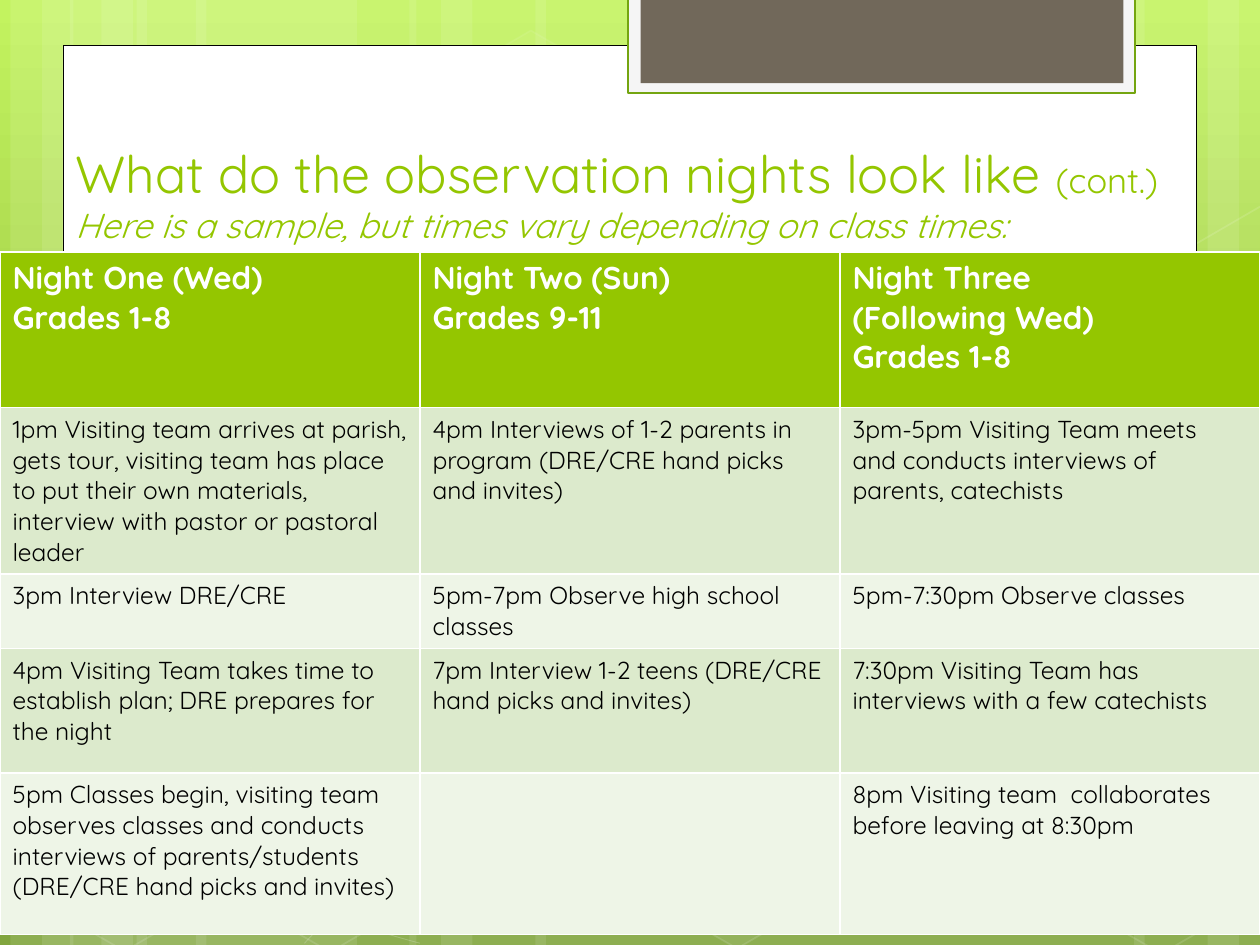
from copy import deepcopy
from math import cos, radians, sin

from pptx import Presentation
from pptx.dml.color import RGBColor
from pptx.enum.shapes import MSO_SHAPE
from pptx.enum.text import MSO_ANCHOR
from pptx.oxml.ns import qn
from pptx.oxml.xmlchemy import OxmlElement
from pptx.util import Pt

FONT = "Quicksand"
WHITE, BLACK, GREEN = "FFFFFF", "000000", "94C600"
BODY_FILLS = ["DCEACC", "EEF5E7"]
WIDTH, HEIGHT = 720, 540
TILT = 30

# Text
TITLE = [
    ("What do the observation nights look like ", 29.7, False),
    ("(cont.)", 19.8, False),
    ("\n", 19.8, False),
    ("Here is a sample, but times vary depending on class times:", 19.8, True),
]
SCHEDULE = [
    ["Night One (Wed)\nGrades 1-8",
     "Night Two (Sun)\nGrades 9-11",
     "Night Three\n(Following Wed)\nGrades 1-8"],
    ["1pm Visiting team arrives at parish, gets tour, visiting team has place to put "
     "their own materials, interview with pastor or pastoral leader",
     "4pm Interviews of 1-2 parents in program (DRE/CRE hand picks and invites)",
     "3pm-5pm Visiting Team meets and conducts interviews of parents, catechists"],
    ["3pm Interview DRE/CRE",
     "5pm-7pm Observe high school classes",
     "5pm-7:30pm Observe classes"],
    ["4pm Visiting Team takes time to establish plan; DRE prepares for the night",
     "7pm Interview 1-2 teens (DRE/CRE hand picks and invites)",
     "7:30pm Visiting Team has interviews with a few catechists"],
    ["5pm Classes begin, visiting team observes classes and conducts interviews of "
     "parents/students (DRE/CRE hand picks and invites)",
     "",
     "8pm Visiting team  collaborates before leaving at 8:30pm"],
]
ROW_HEIGHTS = [89, 95, 42.5, 71.3, 92.2]

# Backdrop: gradient stops, then bands as (left, width, rotation)
GRADIENT = [(0, "C3F35F"), (0.62, "93BF3F"), (1, "81A53E")]
BANDS = [
    (78, 126, 0), (6, 36, 0), (24, 60, 0), (112, 126, 0), (40, 36, 0), (58, 60, 0),
    (528, 126, 180), (690, 36, 180), (648, 60, 180),
    (306, 222, 0), (234, 36, 0), (252, 60, 0),
]
# Curves: a start point, then three points for each Bezier segment
CURVES = [
    [(5, 485), (44, 487), (83, 489), (137, 488), (191, 487), (258, 486), (330, 479),
     (402, 472), (504, 459), (570, 444), (636, 431), (703, 409), (725, 397)],
    [(5, 343), (26, 332), (47, 321), (87, 310), (128, 300), (186, 284), (250, 279),
     (314, 274), (392, 273), (471, 279), (550, 284), (682, 307), (725, 312)],
    [(4, 444), (91, 484), (178, 523), (240, 539)],
    [(5, 416), (27, 424), (50, 432), (92, 444), (134, 454), (197, 472), (257, 485),
     (317, 497), (392, 510), (452, 517), (512, 525), (576, 528), (614, 530),
     (652, 533), (662, 531), (680, 531), (699, 531), (712, 529), (725, 528)],
    [(174, 539), (187, 525), (200, 510), (217, 498), (235, 485), (259, 470), (279, 460),
     (300, 450), (312, 446), (338, 438), (364, 431), (413, 421), (438, 416),
     (464, 411), (467, 411), (490, 410), (512, 408), (547, 405), (572, 405),
     (597, 404), (638, 405), (638, 405), (654, 405), (670, 405), (686, 405),
     (699, 406), (712, 406), (718, 407), (724, 408), (722, 407), (724, 408)],
]
# Hexagons: left, top, fill opacity, line opacity (percent)
HEXAGONS = [
    (240.5, 26, 4, 8), (358, 424, 6, 12), (8, 425.5, 0, 12), (10, 224.5, 7, 8),
    (125.5, 426, 0, 12), (542, 326, 10, 12), (600.5, 427, 0, 12), (600.5, 226, 7, 8),
]
# Hexagons cut by the page edge: centre, corners, fill opacity, line opacity
CUT_HEXAGONS = [
    ((26, 385), [(6, 320), (14, 315), (69, 347), (68, 410), (14, 442), (6, 437)], 10, 12),
    ((709, 374.5),
     [(667, 349), (721, 318), (726, 321), (726, 441), (721, 444), (667, 413)], 4, 12),
    ((709, 173.5),
     [(667, 149), (721, 117), (727, 121), (726, 241), (721, 244), (667, 212)], 0, 12),
]


def rgb(value):
    return RGBColor.from_string(value)


def set_opacity(holder, percent):
    """Add an alpha value to the solid fill directly inside an element."""
    color = holder.find(qn("a:solidFill"))[0]
    alpha = OxmlElement("a:alpha")
    alpha.set("val", str(percent * 1000))
    color.append(alpha)


def paint(shape, fill=None, line=None, weight=1, fill_opacity=100, line_opacity=100):
    shape.shadow.inherit = False
    properties = shape.element.spPr
    if fill and fill_opacity:
        shape.fill.solid()
        shape.fill.fore_color.rgb = rgb(fill)
        if fill_opacity < 100:
            set_opacity(properties, fill_opacity)
    else:
        shape.fill.background()
    if line:
        shape.line.color.rgb = rgb(line)
        shape.line.width = Pt(weight)
        if line_opacity < 100:
            set_opacity(properties.find(qn("a:ln")), line_opacity)
    else:
        shape.line.fill.background()


def add_preset(page, kind, left, top, width, height, **style):
    shape = page.shapes.add_shape(kind, Pt(left), Pt(top), Pt(width), Pt(height))
    paint(shape, **style)
    return shape


def add_outline(page, points, close, **style):
    builder = page.shapes.build_freeform(*points[0], scale=Pt(1))
    builder.add_line_segments(points[1:], close=close)
    shape = builder.convert_to_shape()
    paint(shape, **style)
    return shape


def bend(shape):
    """Merge every three straight segments into one cubic Bezier segment."""
    segments = list(shape.element.iter(qn("a:lnTo")))
    for first in range(0, len(segments), 3):
        bezier = OxmlElement("a:cubicBezTo")
        segments[first].addprevious(bezier)
        for segment in segments[first:first + 3]:
            bezier.append(segment[0])
            segment.getparent().remove(segment)


def untilt(point, centre):
    dx, dy = point[0] - centre[0], point[1] - centre[1]
    c, s = cos(radians(TILT)), sin(radians(TILT))
    return centre[0] + dx * c + dy * s, centre[1] - dx * s + dy * c


def add_backdrop(page):
    fill = page.background.fill
    fill.gradient()
    fill.gradient_angle = 270
    stops = next(page.element.iter(qn("a:gsLst")))
    stops.insert(1, deepcopy(stops[0]))
    for stop, (position, color) in zip(fill.gradient_stops, GRADIENT):
        stop.position = position
        stop.color.rgb = rgb(color)

    for left, width, rotation in BANDS:
        band = add_preset(page, MSO_SHAPE.RECTANGLE, left, 0, width, HEIGHT,
                          fill=WHITE, fill_opacity=10)
        band.rotation = rotation
    for curve in CURVES:
        bend(add_outline(page, curve, False, line=WHITE, weight=0.5, line_opacity=20))
    for left, top, inside, edge in HEXAGONS:
        hexagon = add_preset(page, MSO_SHAPE.HEXAGON, left, top, 126, 109.5, fill=WHITE,
                             line=WHITE, fill_opacity=inside, line_opacity=edge)
        hexagon.adjustments[0] = 0.285
        hexagon.rotation = TILT
    for centre, corners, inside, edge in CUT_HEXAGONS:
        upright = [untilt(corner, centre) for corner in corners]
        hexagon = add_outline(page, upright, True, fill=WHITE, line=WHITE,
                              fill_opacity=inside, line_opacity=edge)
        hexagon.rotation = TILT

    # White card and the tab hanging from the top edge
    rectangle = MSO_SHAPE.RECTANGLE
    add_preset(page, rectangle, 36, 26, 648, 486.5, fill=WHITE, line=BLACK, weight=0.5)
    add_preset(page, rectangle, 359, -1.5, 289.5, 54.5, fill="F5F5F5", line="74A510",
               weight=1.25)
    add_preset(page, rectangle, 366, -1.5, 276, 49, fill="71685A")


def add_title(page):
    box = page.shapes.add_textbox(Pt(36), Pt(66), Pt(642), Pt(78))
    box.text_frame.word_wrap = True
    box.text_frame.vertical_anchor = MSO_ANCHOR.BOTTOM
    para = box.text_frame.paragraphs[0]
    for text, size, italic in TITLE:
        if text == "\n":
            para.add_line_break()
            continue
        span = para.add_run()
        span.text = text
        span.font.name, span.font.color.rgb = FONT, rgb(GREEN)
        span.font.size, span.font.italic = Pt(size), italic


def add_schedule(page):
    # The default table style draws the white rules, thicker under the header
    columns = len(SCHEDULE[0])
    table = page.shapes.add_table(len(SCHEDULE), columns, Pt(0), Pt(144),
                                  Pt(WIDTH), Pt(sum(ROW_HEIGHTS))).table
    for column in table.columns:
        column.width = Pt(WIDTH / columns)
    for index, (texts, height) in enumerate(zip(SCHEDULE, ROW_HEIGHTS)):
        header = index == 0
        table.rows[index].height = Pt(height)
        for cell, text in zip(table.rows[index].cells, texts):
            cell.text = text
            cell.fill.solid()
            cell.fill.fore_color.rgb = rgb(GREEN if header else BODY_FILLS[(index - 1) % 2])
            for para in cell.text_frame.paragraphs:
                para.font.name, para.font.bold = FONT, header
                para.font.size = Pt(18 if header else 14)
                para.font.color.rgb = rgb(WHITE if header else BLACK)


def main():
    deck = Presentation()
    deck.slide_width, deck.slide_height = Pt(WIDTH), Pt(HEIGHT)
    page = deck.slides.add_slide(deck.slide_layouts[6])
    add_backdrop(page)
    add_title(page)
    add_schedule(page)
    deck.save("out.pptx")


if __name__ == "__main__":
    main()
